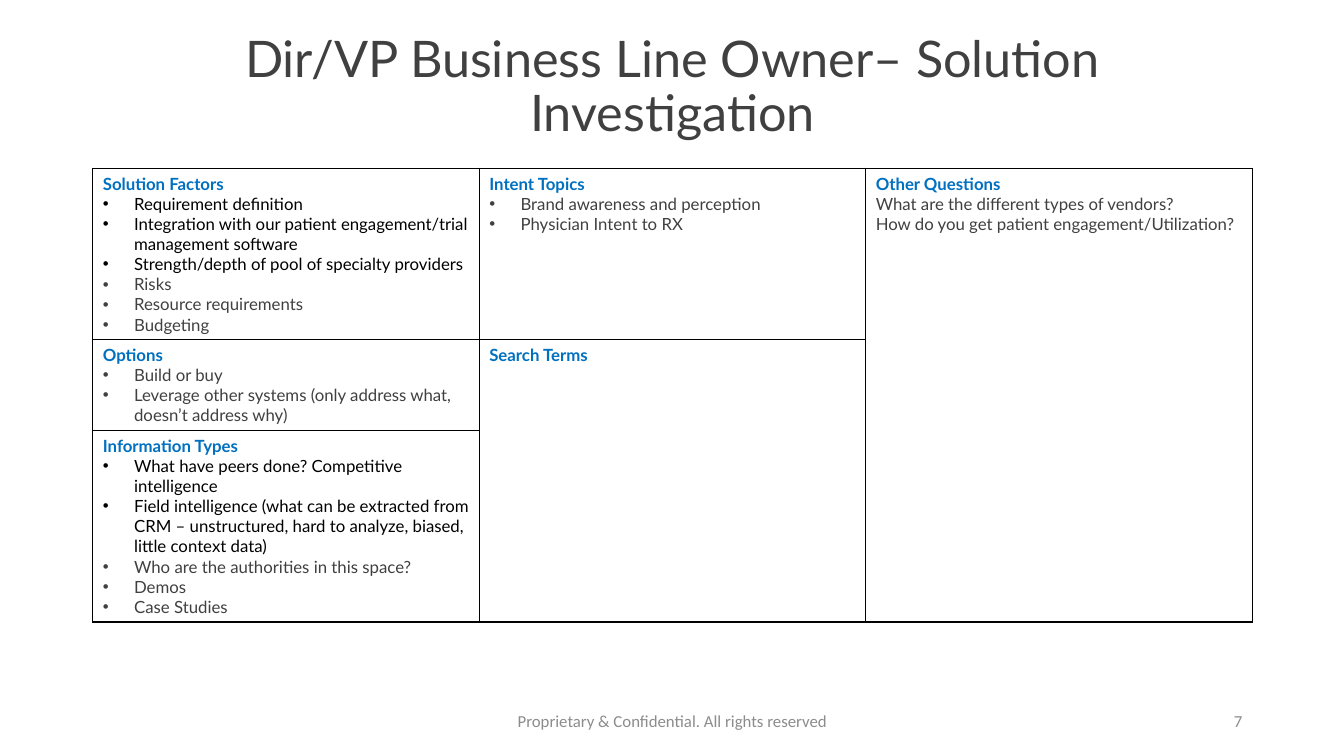
from dataclasses import dataclass

from lxml import etree
from pptx import Presentation
from pptx.dml.color import RGBColor
from pptx.enum.text import MSO_ANCHOR as Anchor, PP_ALIGN as Align
from pptx.oxml.ns import qn
from pptx.util import Inches, Pt

BLACK, GRAY, BLUE, MUTED = "000000", "404040", "0070C0", "8C8C8C"
INDENT = Inches(0.31)
ROW_HEIGHTS = (1.7, 0.9, 1.9)
COLUMNS = 3
TABLE_WIDTH = 11.5


@dataclass
class Topic:
    row: int
    col: int
    heading: str
    key_items: tuple[str, ...] = ()
    items: tuple[str, ...] = ()
    bulleted: bool = True
    row_span: int = 1


@dataclass
class Label:
    text: str
    left: float
    top: float
    width: float
    height: float
    size: int
    font: str
    color: str
    align: Align
    spacing: float = 1.0


TOPICS = (
    Topic(0, 0, "Solution Factors",
          ("Requirement definition",
           "Integration with our patient engagement/trial management software",
           "Strength/depth of pool of specialty providers"),
          ("Risks", "Resource requirements", "Budgeting")),
    Topic(0, 1, "Intent Topics",
          items=("Brand awareness and perception", "Physician Intent to RX")),
    Topic(0, 2, "Other Questions",
          items=("What are the different types of vendors?",
                 "How do you get patient engagement/Utilization?"),
          bulleted=False, row_span=3),
    Topic(1, 0, "Options",
          items=("Build or buy",
                 "Leverage other systems (only address what, doesn’t address why)")),
    Topic(1, 1, "Search Terms", row_span=2),
    Topic(2, 0, "Information Types",
          ("What have peers done? Competitive intelligence",
           "Field intelligence (what can be extracted from CRM – unstructured, "
           "hard to analyze, biased, little context data)"),
          ("Who are the authorities in this space?", "Demos", "Case Studies")),
)

LABELS = (
    Label("Dir/VP Business Line Owner– Solution Investigation",
          0.92, 0.4, 11.5, 0.95, 36, "Lato", GRAY, Align.CENTER, 0.9),
    Label("Proprietary & Confidential. All rights reserved",
          4.42, 6.95, 4.5, 0.4, 12, "Calibri", MUTED, Align.CENTER),
    Label("7", 9.42, 6.95, 3, 0.4, 12, "Calibri", MUTED, Align.RIGHT),
)


def rgb(value: str) -> RGBColor:
    return RGBColor.from_string(value)


def write(p, text: str, *, size: int = 12, font: str = "Lato", color: str = GRAY,
          bold: bool = False, bullet: bool = False) -> None:
    if bullet:
        pPr = p._p.get_or_add_pPr()
        pPr.set("marL", str(INDENT))
        pPr.set("indent", str(-INDENT))
        etree.SubElement(pPr, qn("a:buFont"), typeface="Arial")
        etree.SubElement(pPr, qn("a:buChar"), char="•")
    r = p.add_run()
    r.text = text
    r.font.size, r.font.name, r.font.bold = Pt(size), font, bold
    r.font.color.rgb = rgb(color)


def add_label(slide, label: Label) -> None:
    box = slide.shapes.add_textbox(Inches(label.left), Inches(label.top),
                                   Inches(label.width), Inches(label.height))
    tf = box.text_frame
    tf.word_wrap = True
    tf.vertical_anchor = Anchor.MIDDLE
    p = tf.paragraphs[0]
    p.alignment, p.line_spacing = label.align, label.spacing
    write(p, label.text, size=label.size, font=label.font, color=label.color)


def style_cell(cell) -> None:
    cell.fill.background()
    tcPr = cell._tc.get_or_add_tcPr()
    # Borders come before the fill in the cell properties
    for position, side in enumerate(("a:lnL", "a:lnR", "a:lnT", "a:lnB")):
        line = etree.Element(qn(side), w=str(Pt(1)))
        fill = etree.SubElement(line, qn("a:solidFill"))
        etree.SubElement(fill, qn("a:srgbClr"), val=BLACK)
        tcPr.insert(position, line)


def fill_topic(table, topic: Topic) -> None:
    cell = table.cell(topic.row, topic.col)
    if topic.row_span > 1:
        cell.merge(table.cell(topic.row + topic.row_span - 1, topic.col))
    tf = cell.text_frame
    write(tf.paragraphs[0], topic.heading, color=BLUE, bold=True)
    for items, color in ((topic.key_items, BLACK), (topic.items, GRAY)):
        for item in items:
            write(tf.add_paragraph(), item, color=color, bullet=topic.bulleted)


def add_topic_table(slide) -> None:
    frame = slide.shapes.add_table(len(ROW_HEIGHTS), COLUMNS, Inches(0.92), Inches(1.67),
                                   Inches(TABLE_WIDTH), Inches(sum(ROW_HEIGHTS)))
    table = frame.table
    table.first_row = table.horz_banding = False
    for column in table.columns:
        column.width = Inches(TABLE_WIDTH / COLUMNS)
    for row, height in zip(table.rows, ROW_HEIGHTS):
        row.height = Inches(height)
    for cell in table.iter_cells():
        style_cell(cell)
    for topic in TOPICS:
        fill_topic(table, topic)


def main() -> None:
    prs = Presentation()
    prs.slide_width, prs.slide_height = Inches(13.33), Inches(7.5)
    slide = prs.slides.add_slide(prs.slide_layouts[6])

    # Title and footer
    for label in LABELS:
        add_label(slide, label)

    # Topic grid
    add_topic_table(slide)

    prs.save("out.pptx")


if __name__ == "__main__":
    main()
